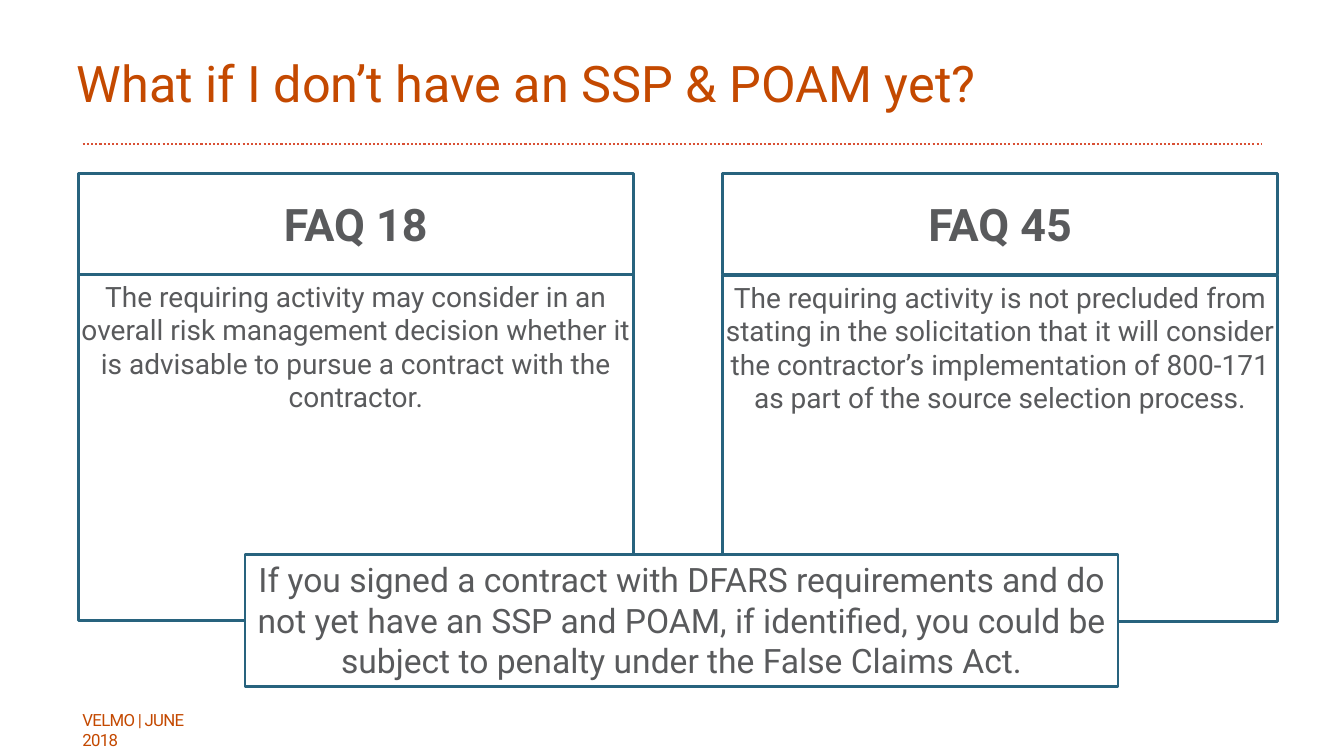
from lxml import etree
from pptx import Presentation
from pptx.dml.color import RGBColor
from pptx.enum.dml import MSO_LINE
from pptx.enum.shapes import MSO_CONNECTOR, MSO_SHAPE
from pptx.enum.text import MSO_ANCHOR, PP_ALIGN
from pptx.oxml.ns import qn
from pptx.util import Inches, Pt

TOP, MIDDLE, BOTTOM = MSO_ANCHOR.TOP, MSO_ANCHOR.MIDDLE, MSO_ANCHOR.BOTTOM
LEFT, CENTER = PP_ALIGN.LEFT, PP_ALIGN.CENTER
RECT, STRAIGHT = MSO_SHAPE.RECTANGLE, MSO_CONNECTOR.STRAIGHT
DOTS = MSO_LINE.ROUND_DOT

FONT = "Roboto"
COLORS = {
    "title": "C44900",
    "rule": "D95035",
    "edge": "28637E",
    "text": "595A5C",
    "white": "FFFFFF",
}


def color(name):
    return RGBColor.from_string(COLORS[name])


def add_text(text, left, top, width, height, size, ink="text", bold=False,
             boxed=True, align=CENTER, anchor=TOP, inset=0, before=0,
             line=1.0, track=0):
    """Add text in an outlined white box, or in a plain one if not boxed."""
    place = [Inches(n) for n in (left, top, width, height)]
    if boxed:
        box = slide.shapes.add_shape(RECT, *place)
        box.shadow.inherit = False
        box.fill.solid()
        box.fill.fore_color.rgb = color("white")
        box.line.color.rgb = color("edge")
        box.line.width = Pt(2)
    else:
        box = slide.shapes.add_textbox(*place)
    frame = box.text_frame
    frame.word_wrap = True
    frame.vertical_anchor = anchor
    frame.margin_left = frame.margin_right = Inches(inset)
    frame.margin_top = frame.margin_bottom = Inches(0.05)
    para = frame.paragraphs[0]
    para.alignment = align
    para.line_spacing = line
    para.space_before = Pt(before)
    run = para.add_run()
    run.text = text
    run.font.name = FONT
    run.font.size = Pt(size)
    run.font.bold = bold
    run.font.color.rgb = color(ink)
    if track:
        run.font._element.set("spc", str(round(track * 100)))


deck = Presentation()
deck.slide_width, deck.slide_height = Inches(13.33), Inches(7.5)
slide = deck.slides.add_slide(deck.slide_layouts[6])

add_text("VELMO | JUNE 2018", 0.72, 6.99, 1.5, 0.3, 12, ink="title",
         boxed=False, align=LEFT, inset=0.1, track=-0.5)

rule = slide.shapes.add_connector(
    STRAIGHT, Inches(0.82), Inches(1.43), Inches(12.52), Inches(1.43))
rule.line.color.rgb = color("rule")
rule.line.width = Pt(1.5)
rule.line.dash_style = DOTS
etree.SubElement(rule._element.spPr, qn("a:effectLst"))

add_text("What if I don’t have an SSP & POAM yet?", 0.76, 0.27, 12, 0.9, 36,
         ink="title", boxed=False, align=LEFT, anchor=BOTTOM, line=0.9)

cards = [
    (0.78, 2.72, "FAQ 18",
     "The requiring activity may consider in an overall risk management "
     "decision whether it is advisable to pursue a contract with the "
     "contractor."),
    (7.17, 2.73, "FAQ 45",
     "The requiring activity is not precluded from stating in the "
     "solicitation that it will consider the contractor’s implementation of "
     "800-171 as part of the source selection process."),
]
for left, top, head, body in cards:
    add_text(body, left, top, 5.5, 3.44, 20, before=12)
    add_text(head, left, 1.72, 5.5, 1, 32, bold=True, anchor=MIDDLE,
             before=12)

add_text("If you signed a contract with DFARS requirements and do not yet "
         "have an SSP and POAM, if identified, you could be subject to "
         "penalty under the False Claims Act.",
         2.43, 5.5, 8.66, 1.31, 24, inset=0.1)

deck.save("out.pptx")
